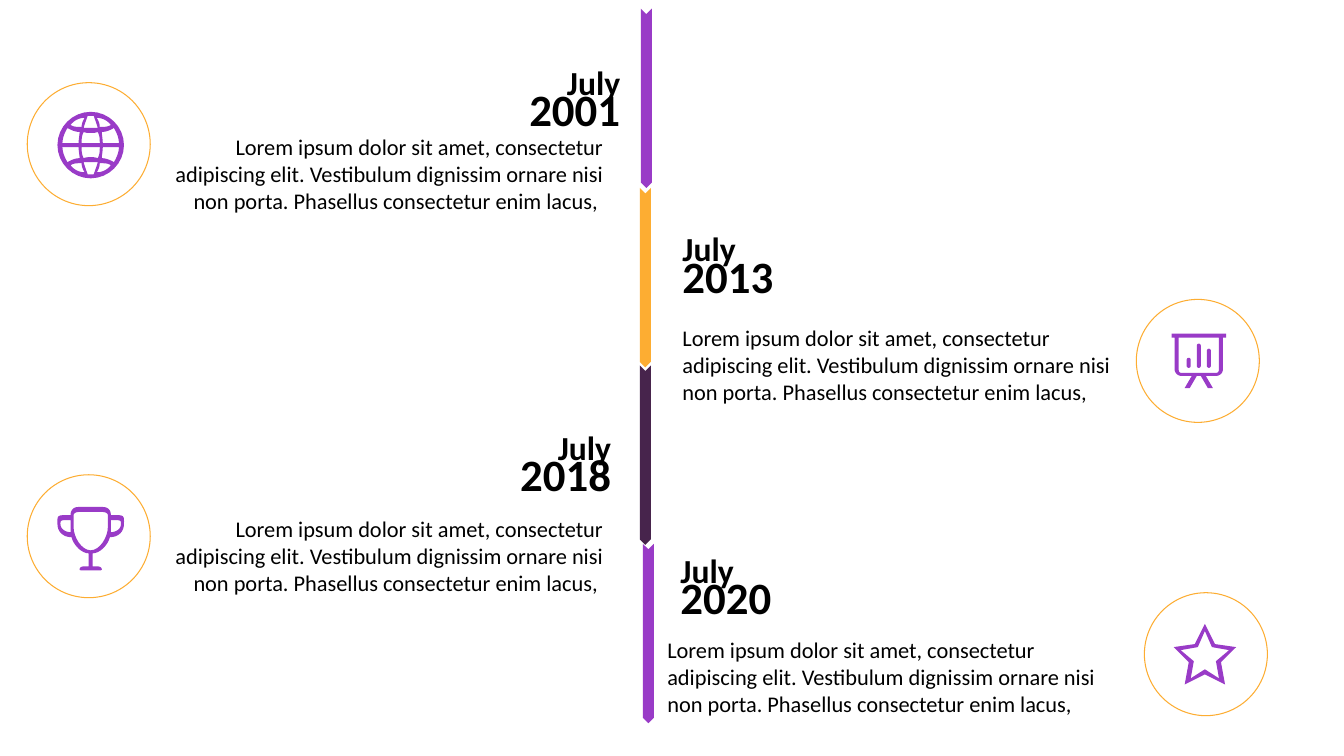
from dataclasses import dataclass

from pptx import Presentation
from pptx.dml.color import RGBColor
from pptx.enum.shapes import MSO_SHAPE
from pptx.enum.text import MSO_AUTO_SIZE, PP_ALIGN
from pptx.util import Pt

PX = 9144  # 100 px to the inch


@dataclass(frozen=True)
class Theme:
    font: str = "Calibri"
    purple: RGBColor = RGBColor(0x99, 0x3B, 0xC7)
    orange: RGBColor = RGBColor(0xFD, 0xAD, 0x32)
    plum: RGBColor = RGBColor(0x47, 0x24, 0x4C)
    white: RGBColor = RGBColor(0xFF, 0xFF, 0xFF)
    black: RGBColor = RGBColor(0, 0, 0)
    body: int = 16
    month: int = 24
    year: int = 32
    leading: int = 24
    ring: float = 0.75


T = Theme()
LOREM = ("Lorem ipsum dolor sit amet, consectetur adipiscing elit. Vestibulum "
         "dignissim ornare nisi non porta. Phasellus consectetur enim lacus,")


def px(*lengths):
    return [round(v * PX) for v in lengths]


def trace(*nodes, steps=8):
    """Turn corners (x, y) and cubic curves (x1, y1, x2, y2, x, y) into points."""
    points = []
    for node in nodes:
        if len(node) == 2:
            points.append(node)
            continue
        ends = [points[-1], node[:2], node[2:4], node[4:]]
        for i in range(1, steps + 1):
            t = i / steps
            weights = ((1 - t) ** 3, 3 * t * (1 - t) ** 2, 3 * t * t * (1 - t), t ** 3)
            points.append(tuple(sum(w * e[axis] for w, e in zip(weights, ends))
                                for axis in (0, 1)))
    return points


def flip(points, fx=1, fy=1):
    return [(x * fx, y * fy) for x, y in points]


def symmetric(*nodes):
    """Close a right half, drawn from the vertical axis, with its mirror image."""
    half = trace(*nodes)
    return half + flip(half[::-1], fx=-1)


def globe():
    k = 18
    quarter = trace((0, -33), (k, -33, 33, -k, 33, 0))
    right = quarter + flip(quarter[::-1], fy=-1)
    side = trace((23, -17), (26, -12, 28, -7, 28, -2), (12, -2),
                 (12, -6, 11, -10, 11, -13), (15, -13, 20, -15, 23, -17))
    cap = trace((20, -20), (17, -18, 14, -18, 9, -18),
                (9, -21, 8, -24, 6, -27), (12, -27, 17, -24, 20, -20))
    middle = symmetric((0, -12), (3, -12, 4, -12, 7, -13), (9, -9, 9, -6, 9, -2))
    top = symmetric((0, -29), (3, -29), (4, -26, 6, -21, 7, -17), (4, -17, 2, -17, 0, -17))
    outlines = [symmetric(*right)]
    for fy in (1, -1):
        outlines += [flip(middle, fy=fy), flip(top, fy=fy)]
        outlines += [flip(panel, fx, fy) for panel in (side, cap) for fx in (1, -1)]
    return outlines


def trophy():
    outer = symmetric((0, 0), (12, 0), (17, 0, 20, 3, 20, 8), (34, 8, 33, 8, 33, 17),
                      (33, 24, 28, 30, 19, 30), (17, 38, 9, 46, 2, 46), (2, 59), (7, 59),
                      (9, 59, 11, 60, 11, 62), (11, 63, 9, 63, 7, 63), (0, 63))
    cup = symmetric((0, 5), (12, 5), (14, 5, 17, 6, 17, 8), (17, 20), (17, 30, 9, 43, 0, 43))
    handle = trace((20, 25), (20, 13), (30, 13, 30, 13, 30, 17), (30, 22, 25, 25, 20, 25))
    return [outer, cup, handle, flip(handle, fx=-1)]


def easel():
    frame = symmetric((0, 0), (27, 0), (27, 4), (24, 4), (24, 35), (24, 39, 21, 42, 17, 42),
                      (7, 42), (14, 54), (9, 54), (2, 42), (0, 42))
    board = symmetric((0, 4), (20, 4), (20, 35), (20, 38, 19, 39, 17, 39), (0, 39))
    bars = [[(x + dx, y) for dx, y in symmetric((0, top), (1, top, 2, top + 1, 2, top + 2),
                                                (2, 32), (2, 33, 1, 34, 0, 34))]
            for x, top in ((-10, 24), (0, 10), (10, 15))]
    return [frame, board, *bars]


def star():
    return [symmetric((0, 0), (10, 20), (31, 23), (16, 38), (20, 60), (0, 50)),
            symmetric((0, 7), (7, 23), (24, 26), (11, 37), (14, 54), (0, 45))]


def paint(sp, fill, line=None):
    sp.shadow.inherit = False
    sp.fill.solid()
    sp.fill.fore_color.rgb = fill
    if line is None:
        sp.line.fill.background()
    else:
        sp.line.color.rgb = line
        sp.line.width = Pt(T.ring)


def add_segment(s, x, y, color):
    sp = s.shapes.add_shape(MSO_SHAPE.CHEVRON, *px(x, y, 178, 11))
    sp.rotation = 90
    paint(sp, color)


def add_ring(s, x, y):
    paint(s.shapes.add_shape(MSO_SHAPE.OVAL, *px(x, y, 122, 122)), T.white, T.orange)


def add_icon(s, x, y, outlines):
    """Draw outlines as one shape around the origin x, y; inner outlines are holes."""
    placed = [[px(x + dx, y + dy) for dx, dy in outline] for outline in outlines]
    builder = s.shapes.build_freeform(*placed[0][0])
    for i, (start, *rest) in enumerate(placed):
        if i:
            builder.move_to(*start)
        builder.add_line_segments(rest, close=True)
    paint(builder.convert_to_shape(), T.purple)


def add_text(s, box, lines, align, bold=False, leading=None):
    """Add a text box with one paragraph for each (text, size) in lines."""
    tf = s.shapes.add_textbox(*px(*box)).text_frame
    tf.word_wrap = True
    tf.auto_size = MSO_AUTO_SIZE.SHAPE_TO_FIT_TEXT
    for i, (text, size) in enumerate(lines):
        p = tf.add_paragraph() if i else tf.paragraphs[0]
        p.alignment = align
        if leading:
            p.line_spacing = Pt(leading)
        r = p.add_run()
        r.text = text
        r.font.name = T.font
        r.font.size = Pt(size)
        r.font.bold = bold
        r.font.color.rgb = T.black


def add_milestone(s, year, align, date_at, body_at, ring_at, icon_at, outlines):
    body = LOREM + " " if align == PP_ALIGN.RIGHT else LOREM
    add_text(s, (*body_at, 458, 91), [(body, T.body)], align)
    add_text(s, (*date_at, 151, 81), [("July", T.month), (year, T.year)],
             align, bold=True, leading=T.leading)
    add_ring(s, *ring_at)
    add_icon(s, *icon_at, outlines)


def main():
    prs = Presentation()
    prs.slide_width, prs.slide_height = px(1333, 750)
    s = prs.slides.add_slide(prs.slide_layouts[6])

    for x, y, color in ((552, 92, T.purple), (551, 270, T.orange),
                        (551, 446, T.plum), (554, 623, T.purple)):
        add_segment(s, x, y, color)

    left, right = PP_ALIGN.LEFT, PP_ALIGN.RIGHT
    milestones = (
        ("2001", right, (474, 63), (150, 127), (27, 82), (90, 144), globe()),
        ("2013", left, (667, 228), (667, 317), (1127, 297), (1189, 331), easel()),
        ("2018", right, (465, 425), (150, 506), (27, 471), (90, 503), trophy()),
        ("2020", left, (665, 547), (652, 626), (1135, 588), (1195, 619), star()),
    )
    for milestone in milestones:
        add_milestone(s, *milestone)

    prs.save("out.pptx")


if __name__ == "__main__":
    main()
